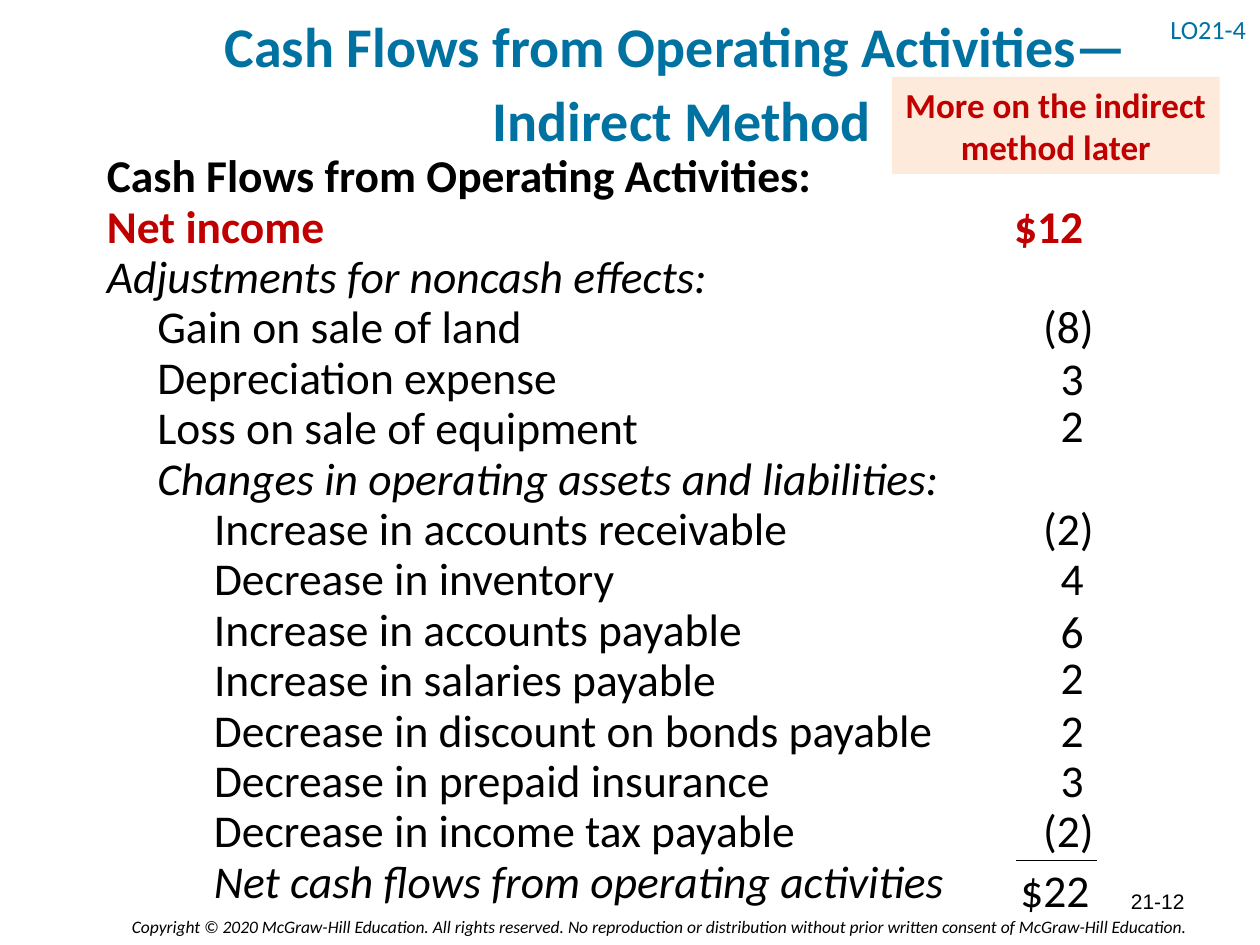
from dataclasses import dataclass

from pptx import Presentation
from pptx.dml.color import RGBColor
from pptx.enum.shapes import MSO_CONNECTOR, MSO_SHAPE
from pptx.enum.text import MSO_ANCHOR as Anchor, MSO_AUTO_SIZE as AutoSize, PP_ALIGN as Align
from pptx.oxml.ns import qn
from pptx.util import Inches, Pt
from lxml.etree import SubElement

COLORS = {"black": "000000", "red": "C00000", "blue": "0072A2", "peach": "FDEADA"}
INDENTS = (0.75, 1.15, 1.6)
FIRST_ROW_TOP, ROW_PITCH, ROW_HEIGHT = 1.12, 0.4, 0.54
ROW_SIZE = 26


@dataclass
class Format:
    size: float
    color: str = "black"
    bold: bool = False
    italic: bool = False
    name: str = "Calibri"
    align: Align = Align.LEFT
    line_spacing: float | None = None


@dataclass
class Amount:
    text: str
    left: float
    width: float
    shift: float = 0


@dataclass
class Row:
    label: str
    level: int
    width: float
    amount: Amount | None = None
    color: str = "black"
    bold: bool = False
    italic: bool = False


def digit(text: str, shift: float = 0) -> Amount:
    return Amount(text, 8.32, 0.39, shift)


def negative(text: str) -> Amount:
    return Amount(f"({text})", 8.18, 0.61)


ROWS = [
    Row("Cash Flows from Operating Activities:", 0, 5.85, bold=True),
    Row("Net income", 0, 1.95, Amount("$12", 7.95, 0.75), "red", bold=True),
    Row("Adjustments for noncash effects:", 0, 5.06, italic=True),
    Row("Gain on sale of land", 1, 3.12, negative("8")),
    Row("Depreciation expense", 1, 3.4, digit("3", 0.01)),
    Row("Loss on sale of equipment", 1, 4.05, digit("2", -0.02)),
    Row("Changes in operating assets and liabilities:", 1, 6.43, italic=True),
    Row("Increase in accounts receivable", 2, 4.79, negative("2")),
    Row("Decrease in inventory", 2, 3.41, digit("4")),
    Row("Increase in accounts payable", 2, 4.43, digit("6", 0.02)),
    Row("Increase in salaries payable", 2, 4.22, digit("2", -0.02)),
    Row("Decrease in discount on bonds payable", 2, 6.07, digit("2")),
    Row("Decrease in prepaid insurance", 2, 4.65, digit("3")),
    Row("Decrease in income tax payable", 2, 4.86, negative("2")),
    Row("Net cash flows from operating activities", 2, 6.07,
        Amount("$22", 8, 0.75, 0.07), italic=True),
]


def rgb(color: str) -> RGBColor:
    return RGBColor.from_string(COLORS[color])


def fill_text(shape, text: str, style: Format) -> None:
    shape.text_frame.text = text
    paragraph = shape.text_frame.paragraphs[0]
    paragraph.alignment = style.align
    paragraph.line_spacing = style.line_spacing
    values = {"size": Pt(style.size), "bold": style.bold,
              "italic": style.italic, "name": style.name}
    for run in paragraph.runs:
        for attribute, value in values.items():
            setattr(run.font, attribute, value)
        run.font.color.rgb = rgb(style.color)


def add_text(slide, box: tuple, text: str, style: Format,
             wrap: bool = True, anchor: Anchor = Anchor.TOP) -> None:
    shape = slide.shapes.add_textbox(*map(Inches, box))
    shape.text_frame.word_wrap = wrap
    shape.text_frame.vertical_anchor = anchor
    fill_text(shape, text, style)


def add_row(slide, index: int, row: Row) -> None:
    top = FIRST_ROW_TOP + index * ROW_PITCH
    add_text(slide, (INDENTS[row.level], top, row.width, ROW_HEIGHT), row.label,
             Format(ROW_SIZE, row.color, row.bold, row.italic), wrap=False)
    if row.amount:
        amount = row.amount
        add_text(slide, (amount.left, top + amount.shift, amount.width, ROW_HEIGHT),
                 amount.text, Format(ROW_SIZE, row.color, row.bold), wrap=False)


def add_total_line(slide) -> None:
    line = slide.shapes.add_connector(
        MSO_CONNECTOR.STRAIGHT, *map(Inches, (8.06, 6.83, 8.71, 6.83)))
    line.line.color.rgb = rgb("black")
    line.line.width = Pt(1)
    SubElement(line._element.spPr, qn("a:effectLst"))


def add_callout(slide) -> None:
    callout = slide.shapes.add_shape(
        MSO_SHAPE.RECTANGLE, *map(Inches, (7.08, 0.61, 2.6, 0.77)))
    callout.shadow.inherit = False
    callout.fill.solid()
    callout.fill.fore_color.rgb = rgb("peach")
    callout.line.fill.background()
    callout.text_frame.word_wrap = True
    callout.text_frame.auto_size = AutoSize.SHAPE_TO_FIT_TEXT
    callout.text_frame.vertical_anchor = Anchor.TOP
    fill_text(callout, "More on the indirect method later",
              Format(20, "red", bold=True, align=Align.CENTER))


def main() -> None:
    presentation = Presentation()
    presentation.slide_width, presentation.slide_height = Inches(10), Inches(7.5)
    slide = presentation.slides.add_slide(presentation.slide_layouts[6])

    add_text(slide, (0.45, 7.22, 9.06, 0.27),
             "Copyright © 2020 McGraw-Hill Education. All rights reserved. No reproduction "
             "or distribution without prior written consent of McGraw-Hill Education.",
             Format(10, italic=True, align=Align.RIGHT))
    add_text(slide, (9.19, 0.05, 0.81, 0.4), "LO21-4",
             Format(15, "blue", line_spacing=0.9), wrap=False, anchor=Anchor.MIDDLE)
    add_text(slide, (0.83, 0, 9.17, 1.25),
             "Cash Flows from Operating Activities— \vIndirect Method",
             Format(32, "blue", bold=True, align=Align.CENTER, line_spacing=1.1),
             anchor=Anchor.MIDDLE)
    for index, row in enumerate(ROWS):
        add_row(slide, index, row)
    add_total_line(slide)
    add_callout(slide)
    add_text(slide, (7.17, 6.95, 2.33, 0.4), "21-12",
             Format(12, name="Arial", align=Align.RIGHT), anchor=Anchor.MIDDLE)

    presentation.save("out.pptx")


if __name__ == "__main__":
    main()
